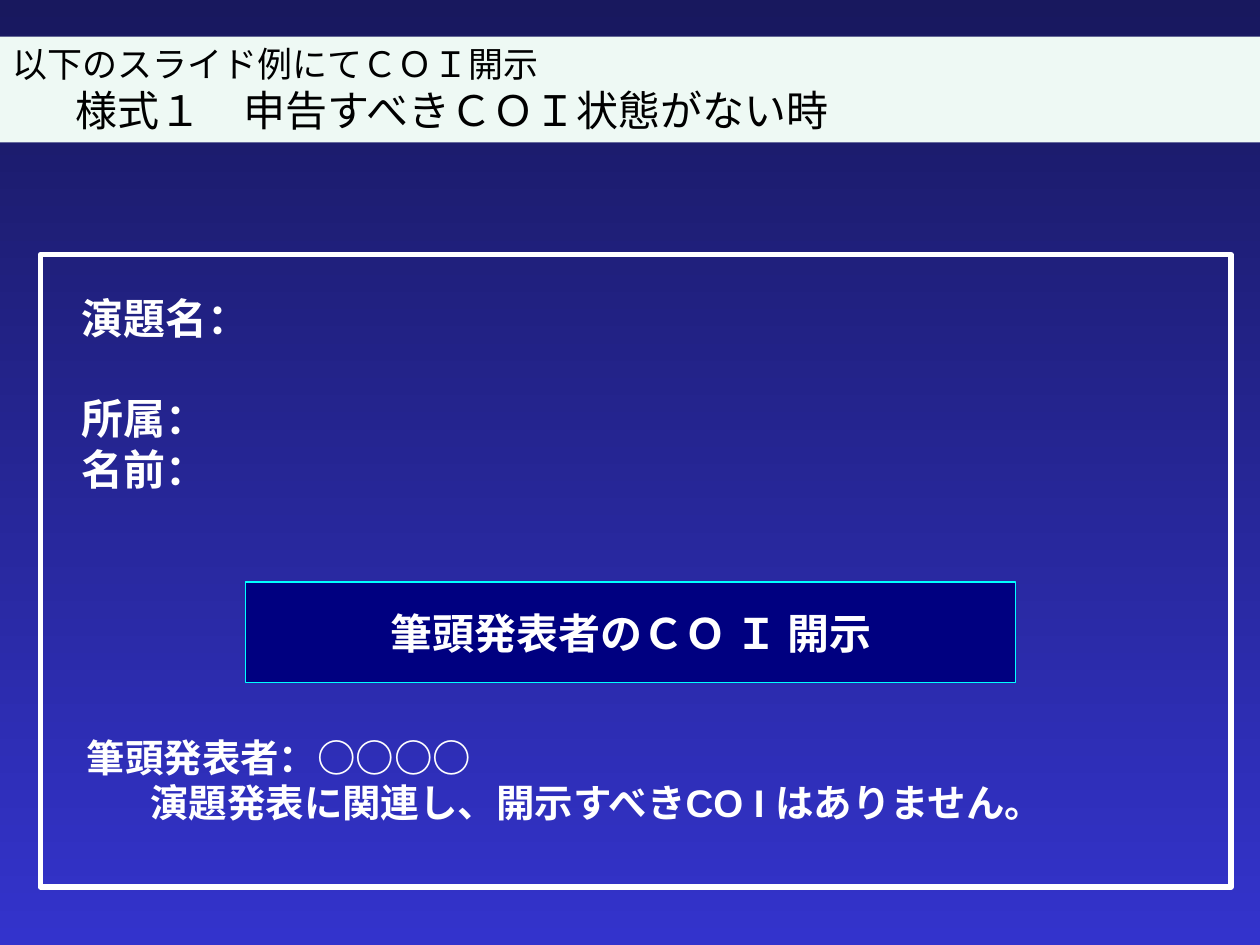
from dataclasses import dataclass
from typing import Optional

import pptx
import pptx.dml.color
import pptx.enum.shapes
import pptx.enum.text
import pptx.util
from pptx.util import Inches, Pt

ALIGN = pptx.enum.text.PP_ALIGN
ANCHOR = pptx.enum.text.MSO_ANCHOR
WHITE = "FFFFFF"


@dataclass
class Line:
    text: str
    size: float
    format: Optional[dict] = None
    indent: float = 0


@dataclass
class Panel:
    left: float
    top: float
    width: float
    height: float
    lines: tuple = ()
    fill: Optional[str] = None
    border: Optional[str] = None
    border_width: float = 0.75
    font: str = "Arial"
    color: str = WHITE
    bold: bool = True
    anchor: ANCHOR = ANCHOR.TOP


def rgb(value: str) -> pptx.dml.color.RGBColor:
    return pptx.dml.color.RGBColor.from_string(value)


def write_line(paragraph, line: Line, panel: Panel) -> None:
    for name, value in {"alignment": ALIGN.LEFT, **(line.format or {})}.items():
        setattr(paragraph, name, value)
    if line.indent:
        properties = paragraph._p.get_or_add_pPr()
        properties.set("marL", str(Inches(line.indent)))
        properties.set("indent", "0")
    run = paragraph.add_run()
    run.text = line.text
    font_format = {"name": panel.font, "size": Pt(line.size), "bold": panel.bold}
    for name, value in font_format.items():
        setattr(run.font, name, value)
    run.font.color.rgb = rgb(panel.color)


def draw_panel(slide, panel: Panel) -> None:
    """Draw a rectangle if it has a fill or border, otherwise a text box."""
    place = [Inches(v) for v in (panel.left, panel.top, panel.width, panel.height)]
    if panel.fill or panel.border:
        shape = slide.shapes.add_shape(pptx.enum.shapes.MSO_SHAPE.RECTANGLE, *place)
        shape.shadow.inherit = False
    else:
        shape = slide.shapes.add_textbox(*place)
    if panel.fill:
        shape.fill.solid()
        shape.fill.fore_color.rgb = rgb(panel.fill)
    else:
        shape.fill.background()
    if panel.border:
        shape.line.color.rgb = rgb(panel.border)
        shape.line.width = Pt(panel.border_width)
    else:
        shape.line.fill.background()
    frame = shape.text_frame
    frame.word_wrap = True
    frame.vertical_anchor = panel.anchor
    for index, line in enumerate(panel.lines):
        paragraph = frame.add_paragraph() if index else frame.paragraphs[0]
        write_line(paragraph, line, panel)


def paint_background(slide, top_color: str, bottom_color: str) -> None:
    fill = slide.background.fill
    fill.gradient()
    fill.gradient_angle = 270
    for stop, position, color in zip(fill.gradient_stops, (0, 1), (top_color, bottom_color)):
        stop.position = position
        stop.color.rgb = rgb(color)


STATEMENT_FORMAT = {"line_spacing": 0.8, "space_before": Pt(4.4)}

PANELS = (
    Panel(1.95, 4.62, 6.11, 0.8, fill="000080", border="00FFFF", anchor=ANCHOR.MIDDLE,
          lines=(Line("筆頭発表者のＣＯ Ｉ 開示", 24, {"alignment": ALIGN.CENTER}),)),
    Panel(0.59, 5.85, 8.93, 1.05, lines=(
        Line("筆頭発表者：○○○○", 22, STATEMENT_FORMAT),
        Line("　演題発表に関連し、開示すべきCO I はありません。", 22, STATEMENT_FORMAT, 0.2))),
    Panel(0, 0.29, 10, 0.84, fill="EEF9F4", font="Noto Sans CJK JP", color="000000",
          bold=False, lines=(
              Line("以下のスライド例にてＣＯＩ開示", 20),
              Line("　\t様式１　申告すべきＣＯＩ状態がない時", 24))),
    Panel(0.32, 2.02, 9.45, 5.02, border=WHITE, border_width=3),
    Panel(0.55, 2.27, 9, 1.77, lines=(
        Line("演題名：", 24),
        Line("所属：", 24, {"space_before": Pt(28.8)}),
        Line("名前：", 24))),
)


def main() -> None:
    presentation = pptx.Presentation()
    presentation.slide_width = Inches(10)
    presentation.slide_height = Inches(7.5)
    slide = presentation.slides.add_slide(presentation.slide_layouts[6])
    paint_background(slide, "18185E", "3333CC")
    for panel in PANELS:
        draw_panel(slide, panel)
    presentation.save("out.pptx")


if __name__ == "__main__":
    main()
